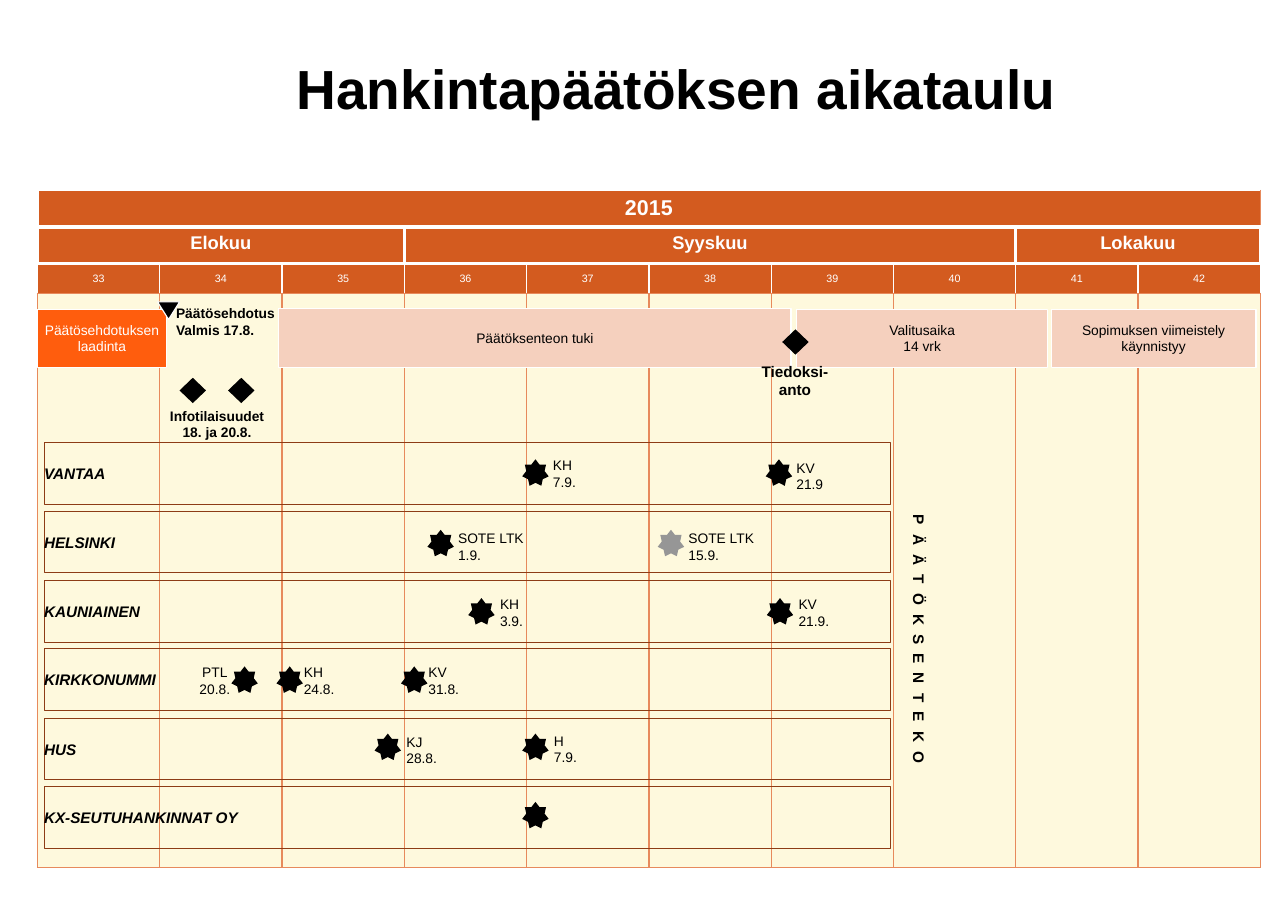
from pptx import Presentation
from pptx.dml.color import RGBColor
from pptx.enum.shapes import MSO_SHAPE as Geo
from pptx.enum.text import MSO_ANCHOR as Anchor, PP_ALIGN as Align
from pptx.oxml.ns import qn
from pptx.util import Inches, Pt
from lxml.etree import SubElement

# Content
TITLE = "Hankintapäätöksen aikataulu"
YEAR = "2015"
MONTHS = [("Elokuu", 3), ("Syyskuu", 5), ("Lokakuu", 2)]
WEEKS = range(33, 43)

BLACK = RGBColor(0, 0, 0)
WHITE = RGBColor(255, 255, 255)
GREY = RGBColor(0x96, 0x96, 0x96)
RUST = RGBColor(0xD3, 0x5B, 0x1F)
CREAM = RGBColor(0xFE, 0xF9, 0xDD)
PEACH = RGBColor(0xE7, 0x8A, 0x5C)
BLUSH = RGBColor(0xF5, 0xD0, 0xBE)
FLAME = RGBColor(0xFF, 0x5D, 0x0D)
BROWN = RGBColor(0x8D, 0x3C, 0x15)

# Phases: left, top, width, height, lines, fill, text colour
PHASES = [
    (0.34, 2.81, 1.17, 0.53, ["Päätösehdotuksen laadinta"], FLAME, WHITE),
    (2.53, 2.8, 4.65, 0.54, ["Päätöksenteon tuki"], BLUSH, BLACK),
    (7.23, 2.81, 2.28, 0.53, ["Valitusaika", "14 vrk"], BLUSH, BLACK),
    (9.54, 2.81, 1.86, 0.53, ["Sopimuksen viimeistely käynnistyy"],
     BLUSH, BLACK),
]
# Milestone diamonds: left, top
GEMS = [(7.1, 2.99), (1.63, 3.43), (2.07, 3.43)]
# Milestone notes: left, top, width, height, lines, size, alignment
NOTES = [
    (1.5, 2.72, 1.3, 0.4, ["Päätösehdotus", "Valmis 17.8."], 9, Align.LEFT),
    (6.75, 3.24, 0.93, 0.44, ["Tiedoksi-anto"], 10, Align.CENTER),
    (1.32, 3.65, 1.3, 0.4, ["Infotilaisuudet", "18. ja 20.8."], 9,
     Align.CENTER),
]
# Lanes: name, star top, events (star left, label left, label top, lines)
LANES = [
    ("VANTAA", 4.17, [(4.74, 4.92, 4.1, ["KH", "7.9."]),
                      (6.95, 7.13, 4.12, ["KV", "21.9"])]),
    ("HELSINKI", 4.81, [(3.88, 4.06, 4.76, ["SOTE LTK", "1.9."]),
                        (5.97, 6.15, 4.76, ["SOTE LTK", "15.9."])]),
    ("KAUNIAINEN", 5.43, [(4.25, 4.44, 5.36, ["KH", "3.9."]),
                          (6.96, 7.15, 5.36, ["KV", "21.9."])]),
    ("KIRKKONUMMI", 6.05, [(2.1, 1.48, 5.98, ["PTL", "20.8."]),
                           (2.51, 2.66, 5.98, ["KH", "24.8."]),
                           (3.64, 3.79, 5.98, ["KV", "31.8."])]),
    ("HUS", 6.66, [(3.4, 3.59, 6.61, ["KJ", "28.8."]),
                   (4.74, 4.93, 6.6, ["H", "7.9."])]),
    ("KX-SEUTUHANKINNAT OY", 7.28, [(4.74, 0, 0, [])]),
]
PALE = [("HELSINKI", 5.97)]  # star drawn in grey
SIDE = "PÄÄTÖKSENTEKO"

deck = Presentation()
deck.slide_width, deck.slide_height = Inches(11.69), Inches(8.27)
slide = deck.slides.add_slide(deck.slide_layouts[6])


# Helpers
def write(frame, lines, size, color=BLACK, bold=False, italic=False,
          align=Align.LEFT, lead=None):
    for i, line in enumerate(lines):
        para = frame.add_paragraph() if i else frame.paragraphs[0]
        para.alignment = align
        if lead:
            para.line_spacing = Pt(lead)
        run = para.add_run()
        run.text = line
        font = run.font
        font.name, font.size = "Arial", Pt(size)
        font.bold, font.italic = bold, italic
        font.color.rgb = color


def inset(frame, left, top, right, low):
    frame.margin_left, frame.margin_top = Inches(left), Inches(top)
    frame.margin_right, frame.margin_bottom = Inches(right), Inches(low)


def label(x, y, w, h, lines, size, wrap=True, **style):
    box = slide.shapes.add_textbox(Inches(x), Inches(y), Inches(w), Inches(h))
    box.text_frame.word_wrap = wrap
    write(box.text_frame, lines, size, **style)
    return box


def draw(geo, x, y, w, h, fill=None, line=None):
    shape = slide.shapes.add_shape(geo, Inches(x), Inches(y),
                                   Inches(w), Inches(h))
    shape.shadow.inherit = False
    if fill is None:
        shape.fill.background()
    else:
        shape.fill.solid()
        shape.fill.fore_color.rgb = fill
    if line is None:
        shape.line.fill.background()
    else:
        shape.line.color.rgb = line
        shape.line.width = Pt(0.75)
    frame = shape.text_frame
    frame.word_wrap = True
    frame.vertical_anchor = Anchor.MIDDLE
    inset(frame, 0, 0, 0, 0)
    return shape


def paint(cell, fill, edges):
    props = cell._tc.get_or_add_tcPr()
    for side, (color, width) in zip("LRTB", edges):
        line = SubElement(props, qn("a:ln" + side), w=str(Pt(width)))
        SubElement(SubElement(line, qn("a:solidFill")), qn("a:srgbClr"),
                   val=str(color))
    cell.fill.solid()
    cell.fill.fore_color.rgb = fill


# Title
head = label(2.69, 0.4, 8.75, 0.79, [TITLE], 36, bold=True)
head.text_frame.vertical_anchor = Anchor.MIDDLE
inset(head.text_frame, 0, 0, 0, 0)

# Calendar table
HEIGHTS = [0.33, 0.33, 0.27, 5.21]
THIN, MID, WIDE, WARM = (WHITE, 1), (WHITE, 2.25), (WHITE, 3), (PEACH, 1)
EDGES = [(MID, WARM, THIN, WIDE), (MID, MID, WIDE, MID),
         (THIN, THIN, MID, WARM), (WARM,) * 4]  # left, right, top, bottom
table = slide.shapes.add_table(4, len(WEEKS), Inches(0.34), Inches(1.73),
                               Inches(11.1), Inches(sum(HEIGHTS))).table
table.first_row = table.horz_banding = False
for col in table.columns:
    col.width = Inches(1.11)
for r, high in enumerate(HEIGHTS):
    table.rows[r].height = Inches(high)
    for c in range(len(WEEKS)):
        paint(table.cell(r, c), CREAM if r == 3 else RUST, EDGES[r])

# Table headings: text, span, size, bold, side inset
HEADS = [[(YEAR, len(WEEKS), 14, True, 0.1)],
         [(name, span, 12, True, 0.04) for name, span in MONTHS],
         [(str(week), 1, 7, False, 0) for week in WEEKS]]
for r, heads in enumerate(HEADS):
    c = 0
    for text, span, size, bold, pad in heads:
        cell = table.cell(r, c)
        if span > 1:
            cell.merge(table.cell(r, c + span - 1))
        else:
            cell.vertical_anchor = Anchor.MIDDLE
        inset(cell, pad, 0.05, pad, 0.05)
        write(cell.text_frame, [text], size, WHITE, bold, align=Align.CENTER)
        c += span

# Phases and milestones
for x, y, w, h, lines, fill, ink in PHASES:
    bar = draw(Geo.RECTANGLE, x, y, w, h, fill, WHITE)
    write(bar.text_frame, lines, 9, ink, align=Align.CENTER, lead=10)
flag = draw(Geo.ISOSCELES_TRIANGLE, 1.43, 2.74, 0.2, 0.16, BLACK, WHITE)
flag.rotation = 180
for x, y in GEMS:
    draw(Geo.DIAMOND, x, y, 0.24, 0.23, BLACK)
for x, y, w, h, lines, size, align in NOTES:
    label(x, y, w, h, lines, size, bold=True, align=align)

# Lanes with their events
for i, (name, top, events) in enumerate(LANES):
    lane = draw(Geo.RECTANGLE, 0.4, round(4.02 + 0.624 * i, 2), 7.68, 0.56,
                line=BROWN)
    inset(lane.text_frame, 0, 0, 0.08, 0)
    write(lane.text_frame, [name], 10, bold=True, italic=True)
    for x, left, high, lines in events:
        ink = GREY if (name, x) in PALE else BLACK
        draw(Geo.STAR_7_POINT, x, top, 0.24, 0.24, ink)
        if lines:
            align = Align.CENTER if left < x else Align.LEFT
            label(left, high, 0.94, 0.4, lines, 9, align=align)

# Vertical heading
side = label(7.06, 5.72, 2.56, 0.27, [SIDE], 10, wrap=False, bold=True)
side.rotation = 90
for run in side.text_frame.paragraphs[0].runs:
    run.font._element.set("spc", "600")

deck.save("out.pptx")
